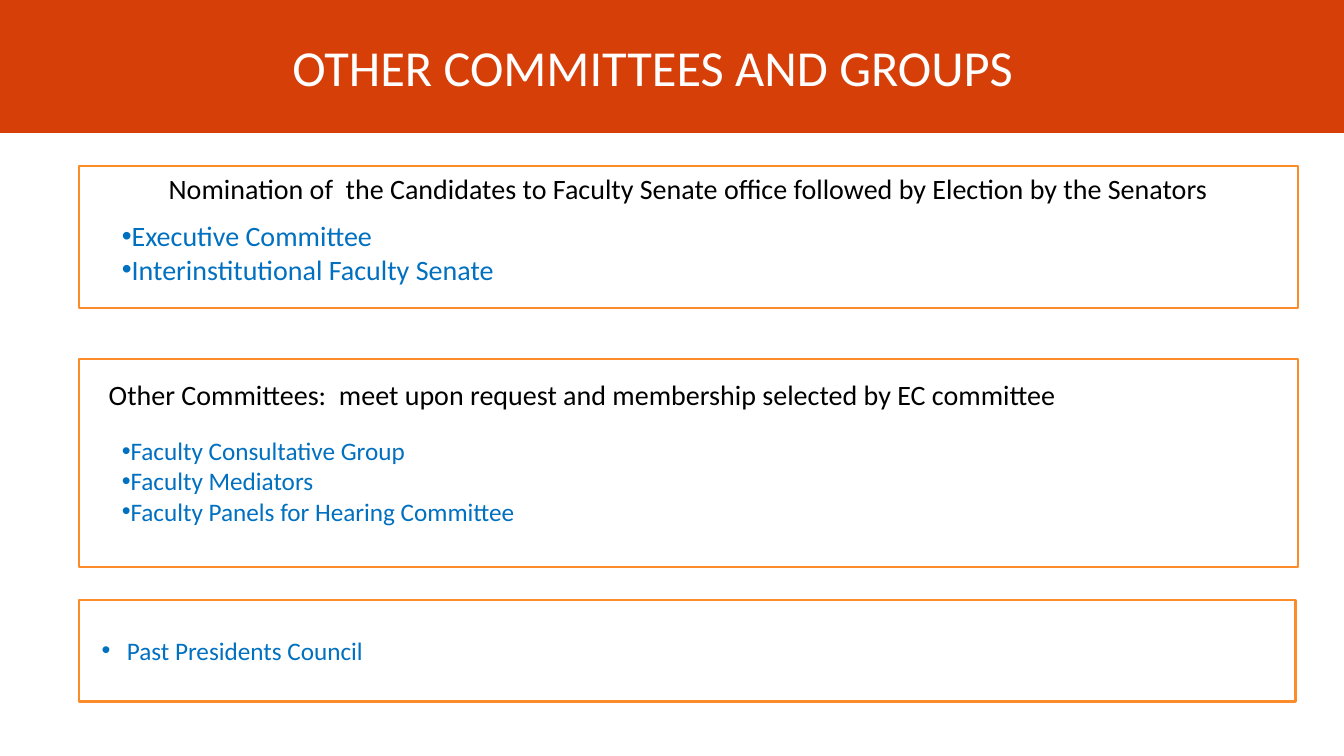
from pptx import Presentation
from pptx.dml.color import RGBColor
from pptx.enum.shapes import MSO_SHAPE
from pptx.enum.text import MSO_ANCHOR, MSO_AUTO_SIZE, PP_ALIGN
from pptx.oxml.ns import qn
from pptx.util import Inches, Pt
from lxml.etree import SubElement

FONT = "Calibri"
COLORS = {
    "white": "FFFFFF",
    "band": "D73F09",
    "frame": "FB8C29",
    "heading": "000000",
    "list": "0070C0",
}
TITLE = "OTHER COMMITTEES AND GROUPS"
FRAMES = [
    (0.78, 1.65, 12.09, 1.41),
    (0.78, 3.56, 12.09, 2.07),
    (0.78, 5.95, 12.07, 1.01),
]
HEADINGS = [
    ("Nomination of  the Candidates to Faculty Senate office followed by Election by the Senators",
     (0.78, 1.65, 12.09, 0.44), PP_ALIGN.CENTER, 0),
    ("Other Committees:  meet upon request and membership selected by EC committee",
     (0.79, 3.7, 12.07, 0.44), PP_ALIGN.LEFT, 0.19),
]
LISTS = [
    (["Executive Committee", "Interinstitutional Faculty Senate"],
     (1.11, 2.12, 4.81, 0.77), 20, 0, 0),
    (["Faculty Consultative Group", "Faculty Mediators", "Faculty Panels for Hearing Committee"],
     (1.11, 4.27, 4.24, 1.01), 18, 0, 0),
    (["Past Presidents Council"],
     (0.78, 6.25, 12.07, 0.4), 18, 0.38, -0.25),
]


def color(name):
    return RGBColor.from_string(COLORS[name])


def add_rectangle(slide, box, line, width, fill=None):
    shape = slide.shapes.add_shape(MSO_SHAPE.RECTANGLE, *map(Inches, box))
    shape.shadow.inherit = False
    if fill:
        shape.fill.solid()
        shape.fill.fore_color.rgb = color(fill)
    else:
        shape.fill.background()
    shape.line.color.rgb = color(line)
    shape.line.width = Pt(width)
    return shape


def format_runs(paragraph, size, color_name):
    for run in paragraph.runs:
        run.font.name = FONT
        run.font.size = Pt(size)
        run.font.color.rgb = color(color_name)


def add_text(slide, lines, box, size, color_name, align=PP_ALIGN.LEFT,
             margin=0, indent=0, bullet=None):
    frame = slide.shapes.add_textbox(*map(Inches, box)).text_frame
    frame.word_wrap = True
    frame.text = "\n".join(lines)
    for paragraph in frame.paragraphs:
        paragraph.alignment = align
        properties = paragraph._p.get_or_add_pPr()
        properties.set("marL", str(Inches(margin)))
        properties.set("indent", str(Inches(indent)))
        if bullet:
            SubElement(properties, qn("a:buFont")).set("typeface", "Arial")
            SubElement(properties, qn("a:buChar")).set("char", bullet)
        format_runs(paragraph, size, color_name)


def main():
    presentation = Presentation()
    presentation.slide_width, presentation.slide_height = Inches(13.33), Inches(7.5)
    slide = presentation.slides.add_slide(presentation.slide_layouts[5])
    slide.background.fill.solid()
    slide.background.fill.fore_color.rgb = color("white")

    title = slide.shapes.title
    band = add_rectangle(slide, (0, 0, 13.33, 1.31), "band", 1.25, "band")
    title.element.addprevious(band.element)
    title.left, title.top, title.width, title.height = map(Inches, (0.53, 0.35, 11.89, 0.7))
    title.text_frame.text = TITLE
    title.text_frame.auto_size = MSO_AUTO_SIZE.NONE
    title.text_frame.vertical_anchor = MSO_ANCHOR.MIDDLE
    heading = title.text_frame.paragraphs[0]
    heading.alignment = PP_ALIGN.CENTER
    heading.line_spacing = 0.9
    format_runs(heading, 36, "white")

    for box in FRAMES:
        add_rectangle(slide, box, "frame", 1.5)
    for text, box, align, margin in HEADINGS:
        add_text(slide, [text], box, 20, "heading", align, margin)
    for lines, box, size, margin, indent in LISTS:
        add_text(slide, lines, box, size, "list", margin=margin, indent=indent, bullet="•")

    presentation.save("out.pptx")


if __name__ == "__main__":
    main()
